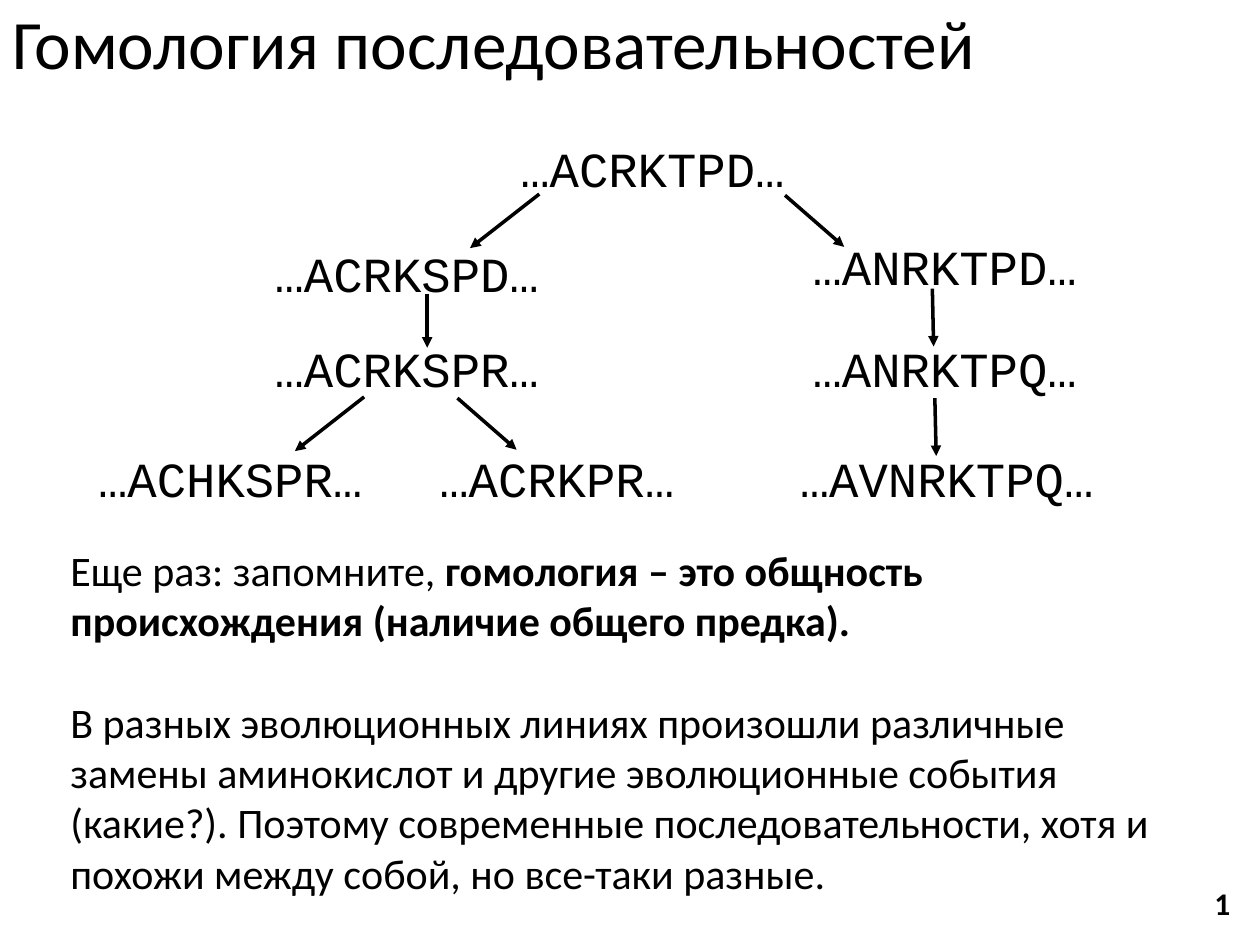
"""Build a slide on sequence homology with a tree of descent."""
from dataclasses import dataclass

from pptx import Presentation
from pptx.dml.color import RGBColor
from pptx.enum.shapes import MSO_CONNECTOR
from pptx.enum.text import MSO_ANCHOR
from pptx.oxml.ns import qn
from pptx.util import Pt
from lxml.etree import SubElement


@dataclass(frozen=True)
class Theme:
    ink: RGBColor = RGBColor(0, 0, 0)
    sans: str = "Calibri"
    mono: str = "Courier New"
    title: float = 39.6
    code: float = 28
    body: float = 24
    page: float = 18


theme = Theme()
deck = Presentation()
deck.slide_width, deck.slide_height = Pt(720), Pt(540)
slide = deck.slides.add_slide(deck.slide_layouts[6])


def add_box(left, top, width, height, wrap=False):
    box = slide.shapes.add_textbox(Pt(left), Pt(top), Pt(width), Pt(height))
    box.text_frame.word_wrap = wrap
    return box.text_frame


def add_run(para, text, size, face=theme.sans, bold=False):
    run = para.add_run()
    run.text = text
    font = run.font
    font.size, font.name, font.bold = Pt(size), face, bold
    font.color.rgb = theme.ink


head = add_box(0, 0, 720, 54, wrap=True)
head.vertical_anchor = MSO_ANCHOR.MIDDLE
head.paragraphs[0].line_spacing = 0.9
add_run(head.paragraphs[0], "Гомология последовательностей", theme.title)

tree = [
    ("ACRKTPD", 373.7, 75.6),
    ("ACRKSPD", 233.3, 135.4),
    ("ACRKSPR", 233.3, 190.1),
    ("ACHKSPR", 132.4, 252.7),
    ("ACRKPR", 319, 252.7),
    ("ANRKTPD", 540.7, 131.8),
    ("ANRKTPQ", 540.7, 190.1),
    ("AVNRKTPQ", 541.8, 252.7),
]
for name, mid, top in tree:
    text = f"…{name}…"
    width = 16.8 * len(text) + 15.6
    frame = add_box(mid - width / 2, top, width, 41.2)
    add_run(frame.paragraphs[0], text, theme.code, theme.mono)

arrows = [
    (308.2, 110.9, 268.6, 141.8),
    (244.1, 167.8, 244.1, 198.7),
    (208.1, 226.8, 168.5, 257.8),
    (261.4, 227.5, 295.2, 257),
    (448.6, 111.6, 482.4, 141.1),
    (532.8, 164.9, 533.5, 198),
    (534.2, 227.5, 535, 260.6),
]
for ends in arrows:
    arrow = slide.shapes.add_connector(MSO_CONNECTOR.STRAIGHT, *map(Pt, ends))
    arrow.line.color.rgb = theme.ink
    arrow.line.width = Pt(2)
    SubElement(arrow.line._get_or_add_ln(), qn("a:tailEnd"), type="triangle")
    SubElement(arrow._element.spPr, qn("a:effectLst"))

body = add_box(33.1, 307.4, 654.5, 211, wrap=True)
first = body.paragraphs[0]
add_run(first, "Еще раз: запомните, ", theme.body)
add_run(first, "гомология – это общность происхождения (наличие общего предка).",
        theme.body, bold=True)
last = body.add_paragraph()
last.space_before = Pt(29.3)
add_run(last, "В разных эволюционных линиях произошли различные замены аминокислот "
        "и другие эволюционные события (какие?). Поэтому современные "
        "последовательности, хотя и похожи между собой, но все-таки разные.",
        theme.body)

page = add_box(686.9, 501.8, 23.8, 28.8)
add_run(page.paragraphs[0], "1", theme.page, bold=True)

deck.save("out.pptx")
